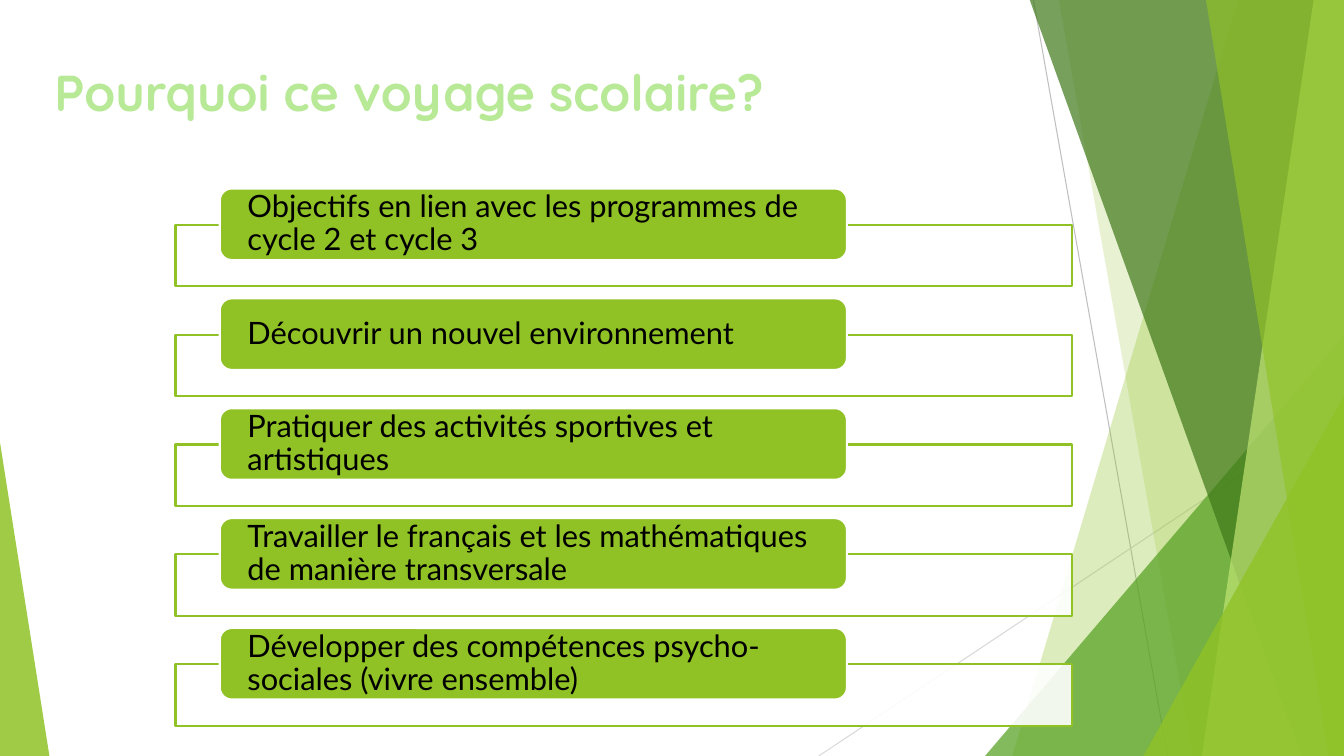
from lxml.etree import SubElement
from pptx import Presentation
from pptx.dml.color import RGBColor
from pptx.enum.shapes import MSO_CONNECTOR, MSO_SHAPE
from pptx.enum.text import MSO_ANCHOR, MSO_AUTO_SIZE, PP_ALIGN
from pptx.oxml.ns import qn
from pptx.util import Inches, Pt

GREEN, WHITE = "90C226", "FFFFFF"
TOP, BOTTOM, RIGHT = -0.01, 7.5, 13.33
PITCH = 1.09

OBJECTIVES = [
    "Objectifs en lien avec les programmes de cycle 2 et cycle 3",
    "Découvrir un nouvel environnement",
    "Pratiquer des activités sportives et artistiques",
    "Travailler le français et les mathématiques de manière transversale",
    "Développer des compétences psycho-sociales (vivre ensemble)",
]


def rgb(value):
    return RGBColor.from_string(value)


class SlideBuilder:
    title_font = "Quicksand"
    body_font = "Lato"

    def __init__(self, prs):
        self.s = prs.slides.add_slide(prs.slide_layouts[5])

    def paint(self, sp, color, alpha=100, line=None):
        sp.shadow.inherit = False
        sp.fill.solid()
        sp.fill.fore_color.rgb = rgb(color)
        if alpha < 100:
            clr = sp._element.spPr.find(qn("a:solidFill")).find(qn("a:srgbClr"))
            SubElement(clr, qn("a:alpha"), val=str(alpha * 1000))
        if line:
            sp.line.color.rgb = rgb(line)
            sp.line.width = Pt(1.5)
        else:
            sp.line.fill.background()

    def line(self, x1, y1, x2, y2, color):
        sp = self.s.shapes.add_connector(
            MSO_CONNECTOR.STRAIGHT, Inches(x1), Inches(y1), Inches(x2), Inches(y2))
        sp.line.color.rgb = rgb(color)
        sp.line.width = Pt(0.75)
        SubElement(sp._element.spPr, qn("a:effectLst"))

    def band(self, top_x, bottom_x, color, alpha):
        corners = [(RIGHT, TOP), (RIGHT, BOTTOM), (bottom_x, BOTTOM)]
        fb = self.s.shapes.build_freeform(Inches(top_x), Inches(TOP))
        fb.add_line_segments([(Inches(x), Inches(y)) for x, y in corners])
        self.paint(fb.convert_to_shape(), color, alpha)

    def shape(self, kind, x, y, w, h, color, alpha=100, line=None):
        sp = self.s.shapes.add_shape(kind, Inches(x), Inches(y), Inches(w), Inches(h))
        self.paint(sp, color, alpha, line)
        return sp

    def triangle(self, x, y, w, color, alpha, apex):
        sp = self.shape(MSO_SHAPE.ISOSCELES_TRIANGLE, x, y, w, BOTTOM - y, color, alpha)
        sp.adjustments[0] = apex

    def text(self, sp, text, size, font, color, bold=False):
        tf = sp.text_frame
        tf.word_wrap = True
        tf.auto_size = MSO_AUTO_SIZE.NONE
        tf.vertical_anchor = MSO_ANCHOR.MIDDLE
        p = tf.paragraphs[0]
        p.alignment = PP_ALIGN.LEFT
        r = p.add_run()
        r.text = text
        r.font.size = Pt(size)
        r.font.name = font
        r.font.bold = bold
        r.font.color.rgb = rgb(color)
        return tf

    def title(self, text):
        sp = self.s.shapes.title
        sp.left, sp.top = Inches(0.44), Inches(0.52)
        sp.width, sp.height = Inches(9.58), Inches(0.77)
        self.text(sp, text, 36, self.title_font, "B7E996", True)

    def objective(self, y, text):
        self.shape(MSO_SHAPE.RECTANGLE, 1.74, y + 0.36, 8.89, 0.61, WHITE, 90, GREEN)
        sp = self.shape(MSO_SHAPE.ROUNDED_RECTANGLE, 2.18, y, 6.22, 0.71, GREEN, line=WHITE)
        tf = self.text(sp, text, 22, self.body_font, "000000")
        tf.margin_left = tf.margin_right = Inches(0.24)
        tf.margin_top = tf.margin_bottom = 0
        tf.paragraphs[0].line_spacing = 0.9


def main():
    prs = Presentation()
    prs.slide_width, prs.slide_height = Inches(RIGHT), Inches(BOTTOM)
    b = SlideBuilder(prs)
    b.line(10.25, 0, 11.58, BOTTOM, "BFBFBF")
    b.line(RIGHT, 4.03, 8.12, BOTTOM, "D9D9D9")
    b.band(12.28, 10.04, GREEN, 30)
    b.band(10.5, 11.83, GREEN, 20)
    b.triangle(9.77, 3.33, 3.56, "54A021", 72, 1)
    b.band(10.21, 12.91, "3F7819", 70)
    b.band(13.03, 11.92, "C0E474", 70)
    b.band(11.96, 13.18, GREEN, 65)
    b.triangle(11.34, 3.93, 1.99, GREEN, 80, 1)
    b.triangle(0, 4.39, 0.49, GREEN, 85, 0)
    b.title("Pourquoi ce voyage scolaire?")
    for i, text in enumerate(OBJECTIVES):
        b.objective(1.87 + i * PITCH, text)
    prs.save("out.pptx")


if __name__ == "__main__":
    main()
